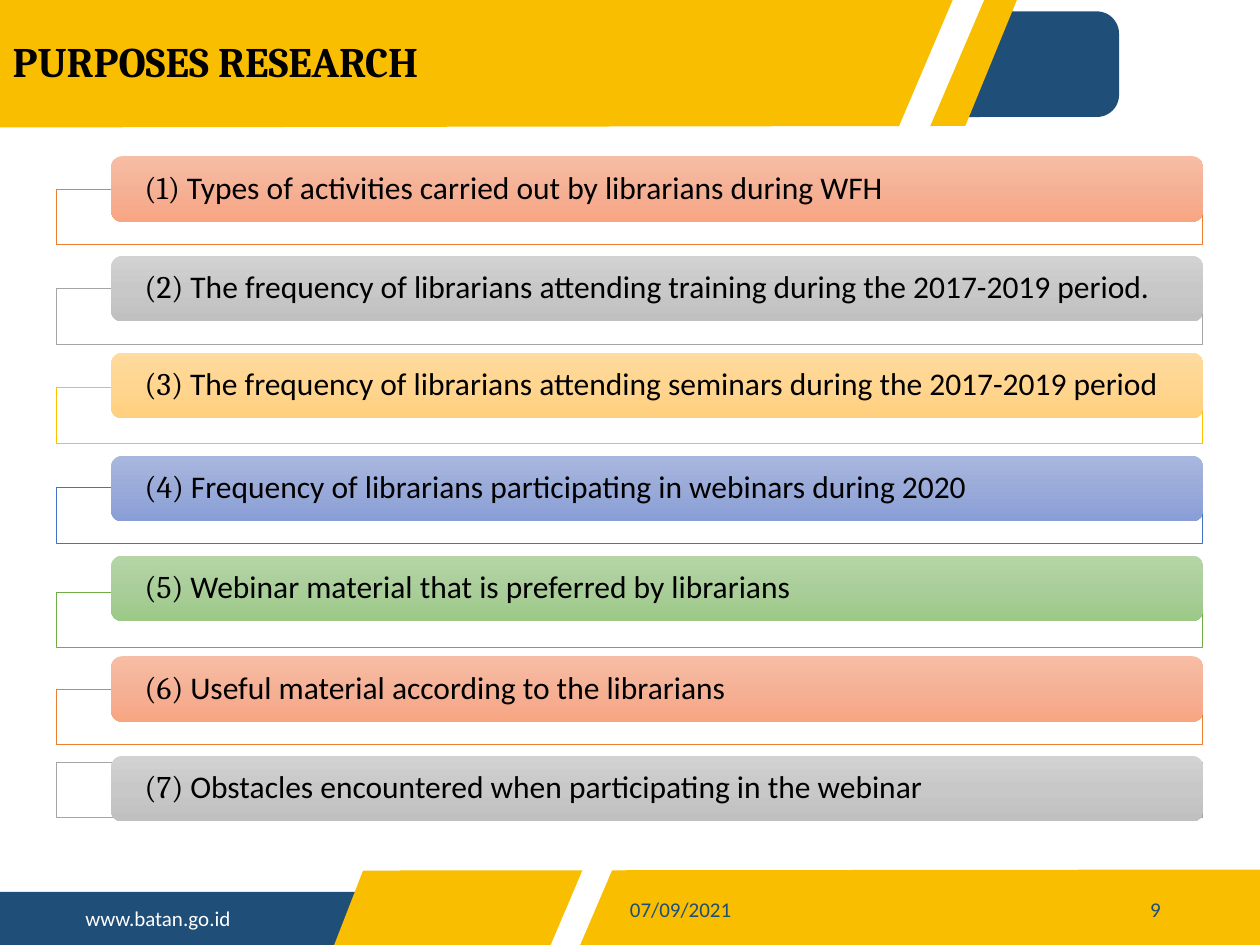
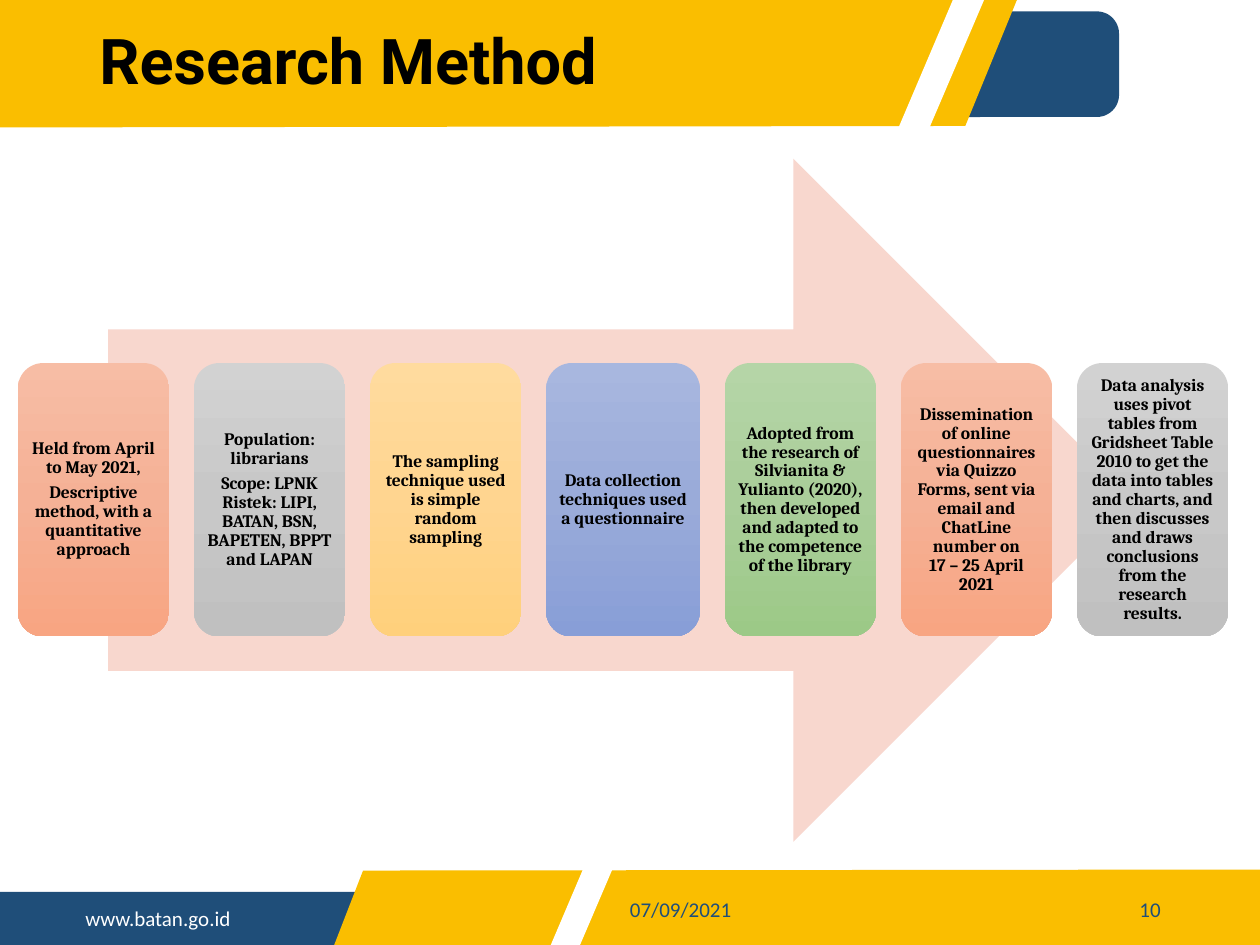
from copy import deepcopy

from pptx import Presentation
from pptx.dml.color import RGBColor
from pptx.enum.shapes import MSO_SHAPE
from pptx.enum.text import MSO_ANCHOR, MSO_AUTO_SIZE, PP_ALIGN
from pptx.oxml.ns import qn
from pptx.util import Cm, Pt

BLACK = RGBColor(0x00, 0x00, 0x00)
WHITE = RGBColor(0xFF, 0xFF, 0xFF)
NAVY = RGBColor(0x1F, 0x4E, 0x79)
GOLD = RGBColor(0xFA, 0xBE, 0x00)
BLUSH = RGBColor(0xF8, 0xD7, 0xCE)

ACCENTS = [
    (RGBColor(0xED, 0x7D, 0x31), ("F7BDA5", "F5B196", "F8A582")),
    (RGBColor(0xA5, 0xA5, 0xA5), ("D2D2D2", "C8C8C8", "C0C0C0")),
    (RGBColor(0xFF, 0xC0, 0x00), ("FFDB9E", "FFD590", "FFD07C")),
    (RGBColor(0x44, 0x72, 0xC4), ("A8B7DF", "9AABD9", "889ED7")),
    (RGBColor(0x70, 0xAD, 0x47), ("B5D5A7", "AACE9A", "9CC987")),
]

WEBSITE = "www.batan.go.id"
DATE = "07/09/2021"
FIRST_NUMBER = 9

PURPOSES = [
    ("Types of activities carried out by librarians during WFH", 3.81, 3.15),
    ("The frequency of librarians attending training during the 2017-2019 period.", 5.82, 5.16),
    ("The frequency of librarians attending seminars during the 2017-2019 period", 7.82, 7.11),
    ("Frequency of librarians participating in webinars during 2020", 9.83, 9.19),
    ("Webinar material that is preferred by librarians", 11.94, 11.2),
    ("Useful material according to the librarians", 13.89, 13.23),
    ("Obstacles encountered when participating in the webinar", 15.37, 15.24),
]

METHOD_STEPS = [
    (3.05, ["Held from April to May 2021,",
            "Descriptive method, with a quantitative approach"]),
    (3.05, ["Population: librarians",
            "Scope: LPNK Ristek: LIPI, BATAN, BSN, BAPETEN, BPPT and LAPAN"]),
    (3.05, ["The sampling technique used is simple random sampling"]),
    (3.1, ["Data collection techniques used a questionnaire"]),
    (3.05, ["Adopted from the research of Silvianita & Yulianto (2020), then "
            "developed and adapted to the competence of the library"]),
    (3.05, ["Dissemination of online questionnaires via Quizzo Forms, sent via "
            "email and ChatLine number on\n17 – 25 April 2021"]),
    (3.05, ["Data analysis uses pivot tables from Gridsheet Table 2010 to get the "
            "data into tables and charts, and then discusses and draws conclusions "
            "from the research results."]),
]

SMALL = {"name": "Calibri", "size": Pt(12)}
ITEM = {"size": Pt(18)}
STEP = {"name": "Cambria", "size": Pt(10), "bold": True}
PURPOSE_TITLE = {"name": "Cambria", "size": Pt(24), "bold": True}
METHOD_TITLE = {"name": "Roboto", "size": Pt(36), "bold": True}
TIGHT = {"line_spacing": 0.9}


def set_all(target, values):
    for name, value in values.items():
        setattr(target, name, value)


def place(left, top, width, height):
    return [Cm(length) for length in (left, top, width, height)]


def style_span(span, look, color):
    set_all(span.font, look)
    span.font.color.rgb = color


def write(box, texts, look, color=BLACK, layout=None, margins=None,
          anchor=MSO_ANCHOR.MIDDLE):
    frame = box.text_frame
    set_all(frame, {"word_wrap": True, "auto_size": MSO_AUTO_SIZE.NONE,
                    "vertical_anchor": anchor})
    set_all(frame, margins or {})
    for index, text in enumerate(texts):
        para = frame.add_paragraph() if index else frame.paragraphs[0]
        set_all(para, {"alignment": PP_ALIGN.LEFT, **(layout or {})})
        para.text = text
        for span in para.runs:
            style_span(span, look, color)
        for line_break in para._p.findall(qn("a:br")):
            line_break.append(deepcopy(para.runs[0]._r.rPr))


def paint(shape, fill, line=None):
    shape.shadow.inherit = False
    shape.fill.solid()
    shape.fill.fore_color.rgb = fill
    if line is None:
        shape.line.fill.background()
    else:
        shape.line.color.rgb = line
        shape.line.width = Pt(0.5)
    return shape


def add_solid(page, kind, area, fill, line=None):
    return paint(page.shapes.add_shape(kind, *place(*area)), fill, line)


def add_outline(page, points, fill):
    corners = [(Cm(x), Cm(y)) for x, y in points]
    builder = page.shapes.build_freeform(*corners[0])
    builder.add_line_segments(corners[1:], close=True)
    return paint(builder.convert_to_shape(), fill)


def add_gradient_card(page, area, shades):
    card = add_solid(page, MSO_SHAPE.ROUNDED_RECTANGLE, area, WHITE)
    card.fill.gradient()
    card.fill.gradient_angle = 270
    stop_list = card._element.spPr.find(".//" + qn("a:gsLst"))
    stop_list.insert(1, deepcopy(stop_list[0]))
    for index, (stop, shade) in enumerate(zip(card.fill.gradient_stops, shades)):
        stop.position = index / 2
        stop.color.rgb = RGBColor.from_string(shade)
    return card


def add_label(page, area, text, color, align=PP_ALIGN.LEFT, anchor=MSO_ANCHOR.MIDDLE):
    box = page.shapes.add_textbox(*place(*area))
    write(box, [text], SMALL, color, {"alignment": align}, anchor=anchor)
    return box


def move_bands_to_layout(page):
    badge_area = (17.58, 0.23, 4.98, 2.13)
    bands = [
        add_solid(page, MSO_SHAPE.RECTANGLE, (0, 17.98, 7.54, 1.09), NAVY),
        add_outline(page, [(7.32, 17.55), (25.4, 17.53), (25.4, 19.07), (6.73, 19.07)], GOLD),
        add_solid(page, MSO_SHAPE.ROUNDED_RECTANGLE, badge_area, NAVY),
        add_outline(page, [(0, 0), (20.5, 0), (19.46, 2.54), (0, 2.57)], GOLD),
        add_label(page, (1.47, 18.14, 5.18, 0.76), WEBSITE, WHITE, anchor=MSO_ANCHOR.TOP),
        add_outline(page, [(19.23, -0.05), (19.86, -0.05), (11.66, 19.13), (11.07, 19.13)], WHITE),
    ]
    bands[2].adjustments[0] = 0.21
    for band in bands:
        page.slide_layout.shapes._spTree.append(band._element)


def finish_page(page, number, title, look, left, width):
    heading = page.shapes.title
    areas = zip(("left", "top", "width", "height"), place(left, 0.23, width, 2.13))
    set_all(heading, dict(areas))
    write(heading, [title], look, layout=TIGHT)
    add_label(page, (12.45, 17.81, 6.17, 1.02), DATE, NAVY)
    add_label(page, (22.05, 17.81, 1.6, 1.02), str(number), NAVY, PP_ALIGN.RIGHT)


def add_purposes(page):
    margins = {"margin_left": Cm(0.61), "margin_right": Cm(0.61),
               "margin_top": 0, "margin_bottom": 0}
    for index, (text, frame_top, bar_top) in enumerate(PURPOSES):
        accent, shades = ACCENTS[index % len(ACCENTS)]
        add_solid(page, MSO_SHAPE.RECTANGLE, (1.14, frame_top, 23.11, 1.12), WHITE, accent)
        bar = add_gradient_card(page, (2.24, bar_top, 22.02, 1.32), shades)
        write(bar, [f"({index + 1}) "], {**ITEM, "name": "Cambria"}, layout=TIGHT,
              margins=margins)
        span = bar.text_frame.paragraphs[0].add_run()
        span.text = text
        style_span(span, {**ITEM, "name": "Calibri"}, BLACK)


def add_method(page):
    add_solid(page, MSO_SHAPE.RIGHT_ARROW, (2.18, 3.2, 20.7, 13.77), BLUSH)
    sides = ("margin_left", "margin_right", "margin_top", "margin_bottom")
    margins = dict.fromkeys(sides, Cm(0.1))
    layout = {**TIGHT, "alignment": PP_ALIGN.CENTER, "space_after": Pt(3.5)}
    left, gap = 0.36, 0.5
    for index, (width, texts) in enumerate(METHOD_STEPS):
        shades = ACCENTS[index % len(ACCENTS)][1]
        card = add_gradient_card(page, (left, 7.32, width, 5.51), shades)
        write(card, texts, STEP, layout=layout, margins=margins)
        left += width + gap


def main():
    deck = Presentation()
    deck.slide_width, deck.slide_height = Cm(25.4), Cm(19.05)
    title_only = deck.slide_layouts[5]
    pages = [deck.slides.add_slide(title_only) for _ in range(2)]
    move_bands_to_layout(pages[0])
    add_purposes(pages[0])
    add_method(pages[1])
    finish_page(pages[0], FIRST_NUMBER, "PURPOSES RESEARCH", PURPOSE_TITLE, 0, 22.05)
    finish_page(pages[1], FIRST_NUMBER + 1, "Research Method", METHOD_TITLE, 1.75, 15.8)
    deck.save("out.pptx")


if __name__ == "__main__":
    main()
